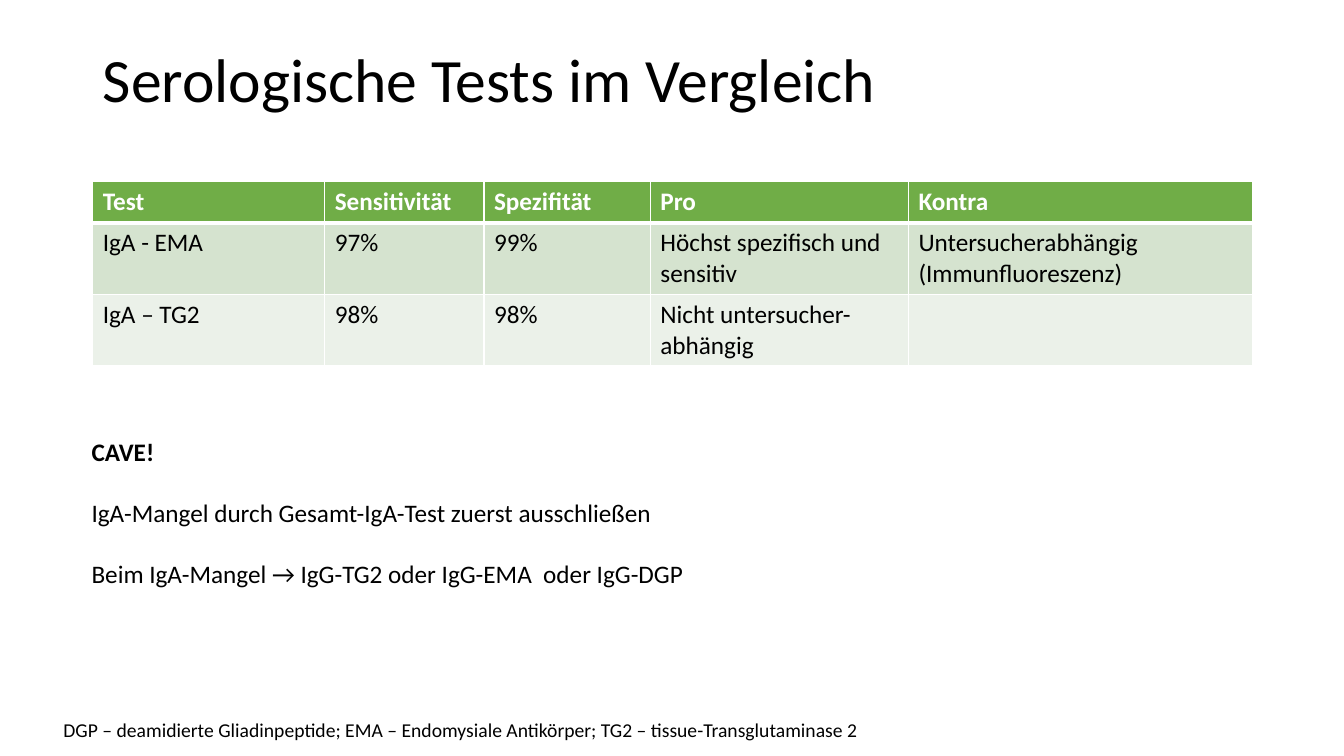
from lxml.etree import SubElement
from pptx import Presentation
from pptx.dml.color import RGBColor
from pptx.enum.text import MSO_ANCHOR, MSO_AUTO_SIZE, PP_ALIGN
from pptx.oxml.ns import qn
from pptx.util import Inches, Pt

# Content
TITLE = "Serologische Tests im Vergleich"
TESTS = [
    ("Test", "Sensitivität", "Spezifität", "Pro", "Kontra"),
    ("IgA - EMA", "97%", "99%", "Höchst spezifisch und sensitiv",
     "Untersucherabhängig (Immunfluoreszenz)"),
    ("IgA – TG2", "98%", "98%", "Nicht untersucher-abhängig", ""),
]
NOTES = [
    ("CAVE!", True),
    ("IgA-Mangel durch Gesamt-IgA-Test zuerst ausschließen", False),
    ("Beim IgA-Mangel → IgG-TG2 oder IgG-EMA  oder IgG-DGP", False),
]
TERMS = [("DGP – deamidierte Gliadinpeptide; EMA – Endomysiale Antikörper; "
          "TG2 – tissue-Transglutaminase 2", False)]

# Style and layout, in inches
FONT = "Calibri"
INK = {"text": "000000", "line": "FFFFFF", "head": "70AD47",
       "odd": "D5E3CF", "even": "EBF1E9"}
WIDE, HIGH = 13.33, 7.5
LEFT, SPAN = 0.92, 11.5
COLS = [2.3, 1.58, 1.65, 2.56, 3.41]
ROWS = [0.41, 0.7, 0.7]


def color(name):
    return RGBColor.from_string(INK[name])


def write(para, text, size, bold=False, ink="text"):
    run = para.add_run()
    run.text = text
    font = run.font
    font.name, font.size, font.bold = FONT, Pt(size), bold
    font.color.rgb = color(ink)


def add_text(slide, area, lines, size, gap=0):
    box = slide.shapes.add_textbox(*map(Inches, area))
    frame = box.text_frame
    frame.word_wrap = True
    frame.auto_size = MSO_AUTO_SIZE.SHAPE_TO_FIT_TEXT
    for i, (text, bold) in enumerate(lines):
        para = frame.add_paragraph() if i else frame.paragraphs[0]
        if i:
            para.space_before = Pt(gap)
        write(para, text, size, bold)


def edge(cell, side, width):
    line = SubElement(cell._tc.get_or_add_tcPr(), qn(f"a:ln{side}"),
                      w=str(Pt(width)))
    fill = SubElement(line, qn("a:solidFill"))
    SubElement(fill, qn("a:srgbClr"), val=INK["line"])


def add_tests(slide):
    area = map(Inches, (LEFT, 1.8, SPAN, sum(ROWS)))
    table = slide.shapes.add_table(len(ROWS), len(COLS), *area).table
    for col, width in zip(table.columns, COLS):
        col.width = Inches(width)
    for row, height in zip(table.rows, ROWS):
        row.height = Inches(height)
    for r, texts in enumerate(TESTS):
        head = r == 0
        for c, text in enumerate(texts):
            cell = table.cell(r, c)
            # The rule under the header is thicker
            widths = {"L": 1, "R": 1, "T": 3 if r == 1 else 1,
                      "B": 3 if head else 1}
            for side, width in widths.items():
                edge(cell, side, width)
            cell.fill.solid()
            cell.fill.fore_color.rgb = color(("head", "odd", "even")[r])
            if text:
                write(cell.text_frame.paragraphs[0], text, 18, head,
                      "line" if head else "text")


def main():
    deck = Presentation()
    deck.slide_width, deck.slide_height = Inches(WIDE), Inches(HIGH)
    slide = deck.slides.add_slide(deck.slide_layouts[5])

    # Title
    title = slide.shapes.title
    title.left, title.top = Inches(LEFT), Inches(0.09)
    title.width, title.height = Inches(SPAN), Inches(1.45)
    frame = title.text_frame
    frame.auto_size = MSO_AUTO_SIZE.NONE
    frame.vertical_anchor = MSO_ANCHOR.MIDDLE
    para = frame.paragraphs[0]
    para.alignment, para.line_spacing = PP_ALIGN.LEFT, 0.9
    write(para, TITLE, 44)

    # Table, footnote and warning
    add_tests(slide)
    add_text(slide, (0.53, 7.07, 11.98, 0.34), TERMS, 14)
    add_text(slide, (0.81, 4.28, SPAN, 1.62), NOTES, 18, gap=22)
    deck.save("out.pptx")


if __name__ == "__main__":
    main()
